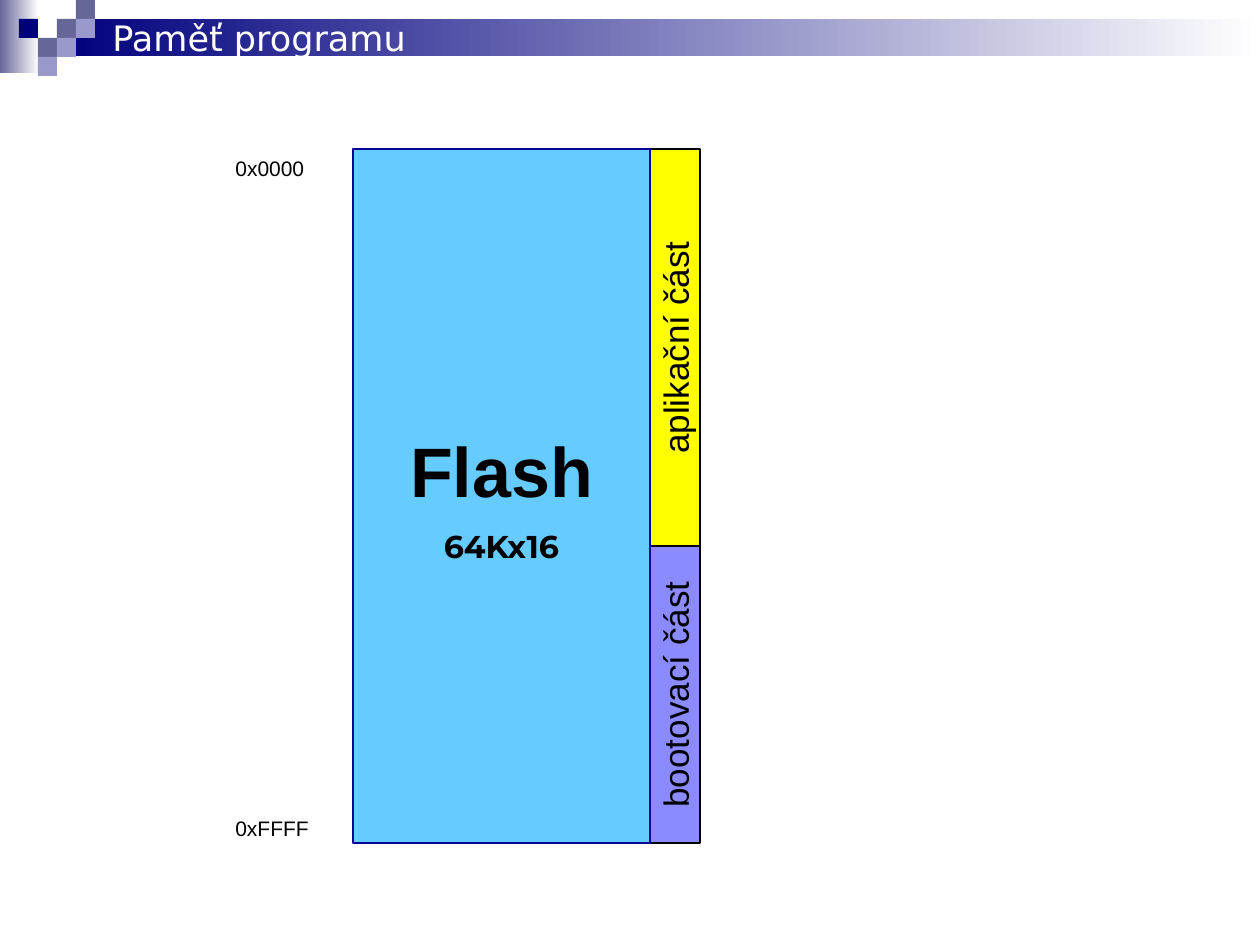
"""Draw a slide with a memory map of program flash."""
from dataclasses import dataclass

from lxml import etree
from pptx import Presentation
from pptx import util as u
from pptx.dml.color import RGBColor
from pptx.enum import shapes, text
from pptx.oxml.ns import qn

PX = u.Inches(1) / 126
STEP = 19
HUES = {
    "white": "FFFFFF", "black": "000000", "navy": "00007D", "slate": "666699",
    "lilac": "9999CC", "blue": "1818FF", "yellow": "FFFF00", "sky": "66CCFF",
    "edge": "000099",
}


@dataclass
class Box:
    x: int
    y: int
    w: int
    h: int


@dataclass
class Line:
    words: str
    size: int
    font: str = "Arial"
    hue: str = "black"
    bold: bool = False
    gap: int = 0


@dataclass
class Block:
    box: Box
    fill: str
    edge: str
    lines: list[Line]
    turn: bool = False
    alpha: int = 100


@dataclass
class Label:
    box: Box
    line: Line
    wrap: bool = False


FADES = [(Box(0, 0, 39, 73), "slate"), (Box(57, STEP, 1203, 37), "navy")]
TILES = [
    (3, 1, "slate"), (4, 0, "slate"), (4, 1, "lilac"), (2, 2, "slate"),
    (1, 1, "navy"), (3, 2, "lilac"), (2, 3, "lilac"),
]
BLOCKS = [
    Block(Box(650, 546, 50, 297), "blue", "black",
          [Line("bootovací část", 20)], True, 50),
    Block(Box(650, 149, 50, 397), "yellow", "black",
          [Line("aplikační část", 20, gap=50)], True),
    Block(Box(353, 149, 297, 694), "sky", "edge",
          [Line("Flash", 40, bold=True, gap=50),
           Line("64Kx16", 18, "Montserrat", bold=True, gap=50)]),
]
LABELS = [
    Label(Box(100, 10, 1071, 55),
          Line("Paměť programu", 20, "DejaVu Sans", "white"), True),
    Label(Box(223, 149, 96, 39), Line("0x0000", 12)),
    Label(Box(223, 809, 101, 39), Line("0xFFFF", 12)),
]


def tint(name: str) -> RGBColor:
    """Look up a colour by name."""
    return RGBColor.from_string(HUES[name])


def place(box: Box) -> list[int]:
    """Turn a box in px into EMU."""
    return [round(side * PX) for side in (box.x, box.y, box.w, box.h)]


def add_rect(slide, box: Box):
    """Add a plain rectangle with no line or shadow."""
    rect = slide.shapes.add_shape(shapes.MSO_SHAPE.RECTANGLE, *place(box))
    rect.shadow.inherit = False
    rect.line.fill.background()
    return rect


def paint(rect, hue: str, alpha: int = 100) -> None:
    """Fill a shape with one colour, see-through if asked."""
    rect.fill.solid()
    rect.fill.fore_color.rgb = tint(hue)
    if alpha < 100:
        node = rect.element.spPr.find(".//" + qn("a:srgbClr"))
        etree.SubElement(node, qn("a:alpha"), val=str(alpha * 1000))


def add_fade(slide, box: Box, hue: str) -> None:
    """Add a bar that fades to white from left to right."""
    rect = add_rect(slide, box)
    rect.fill.gradient()
    rect.fill.gradient_angle = 0
    for stop, name in zip(rect.fill.gradient_stops, (hue, "white")):
        stop.color.rgb = tint(name)


def write(frame, lines: list[Line], align) -> None:
    """Write lines into a text frame, one run each."""
    frame.vertical_anchor = text.MSO_ANCHOR.MIDDLE
    for i, line in enumerate(lines):
        para = frame.add_paragraph() if i else frame.paragraphs[0]
        para.alignment = align
        run = para.add_run()
        run.text = line.words
        run.font.size = u.Pt(line.size)
        run.font.name = line.font
        run.font.bold = line.bold
        run.font.color.rgb = tint(line.hue)
        if line.gap:
            node = etree.Element(qn("a:spcBef"))
            etree.SubElement(node, qn("a:spcPct"), val=str(line.gap * 1000))
            para.line_spacing = 1.0
            para.line_spacing = None
            para._p.get_or_add_pPr().insert(0, node)


def add_block(slide, block: Block) -> None:
    """Add a part of the memory map."""
    rect = add_rect(slide, block.box)
    paint(rect, block.fill, block.alpha)
    rect.line.color.rgb = tint(block.edge)
    rect.line.width = u.Pt(0.75)
    frame = rect.text_frame
    frame.word_wrap = False
    if block.turn:
        rect.element.find(".//" + qn("a:bodyPr")).set("vert", "vert270")
    write(frame, block.lines, text.PP_ALIGN.CENTER)


def add_label(slide, label: Label) -> None:
    """Add a text box that grows with its text."""
    frame = slide.shapes.add_textbox(*place(label.box)).text_frame
    frame.word_wrap = label.wrap
    frame.auto_size = text.MSO_AUTO_SIZE.SHAPE_TO_FIT_TEXT
    write(frame, [label.line], text.PP_ALIGN.LEFT)


def main() -> None:
    """Build the slide and save it."""
    deck = Presentation()
    deck.slide_width, deck.slide_height = u.Inches(10), u.Inches(7.5)
    slide = deck.slides.add_slide(deck.slide_layouts[6])
    for box, hue in FADES:
        add_fade(slide, box, hue)
    for col, row, hue in TILES:
        paint(add_rect(slide, Box(col * STEP, row * STEP, STEP, STEP)), hue)
    for block in BLOCKS:
        add_block(slide, block)
    for label in LABELS:
        add_label(slide, label)
    deck.save("out.pptx")


if __name__ == "__main__":
    main()
